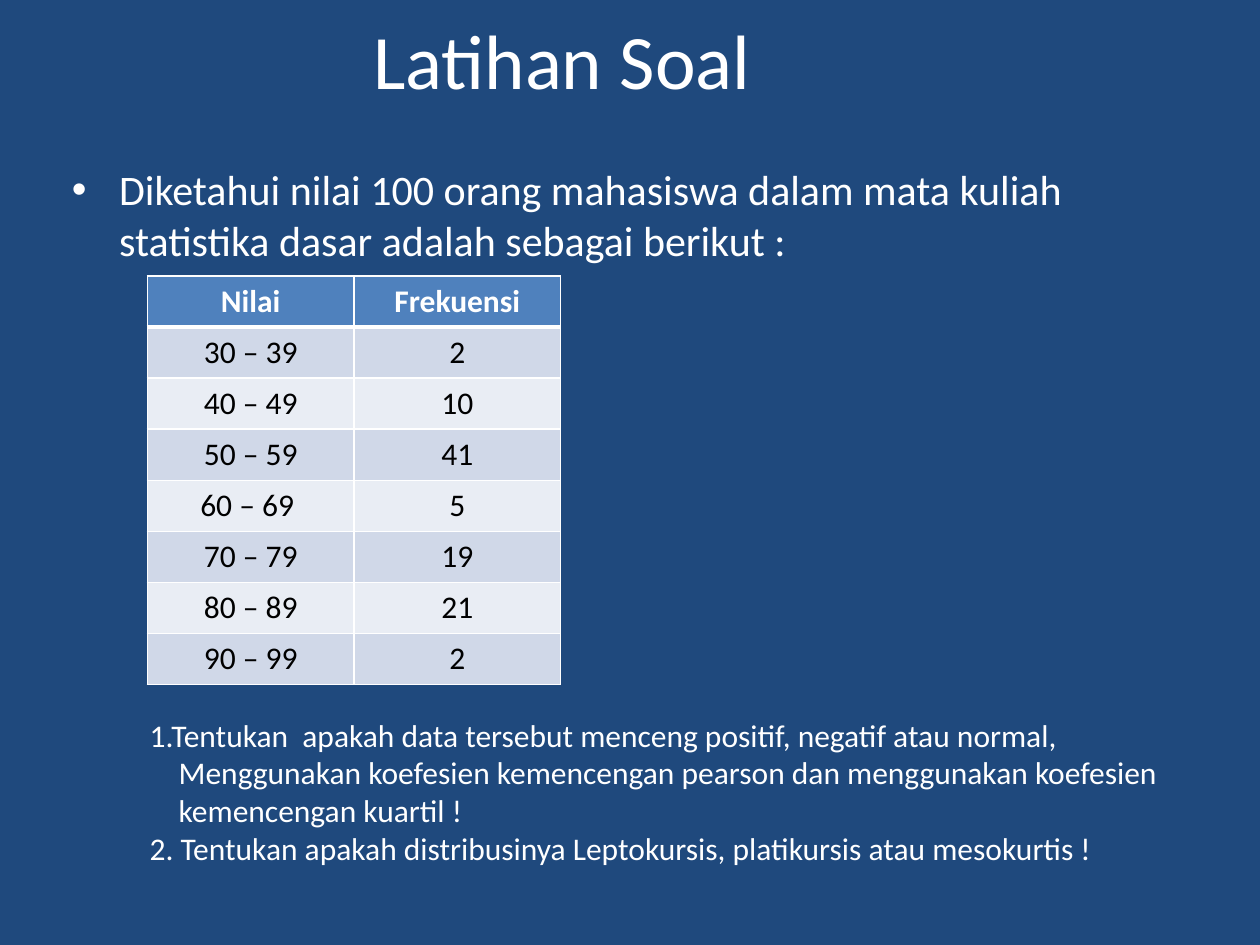
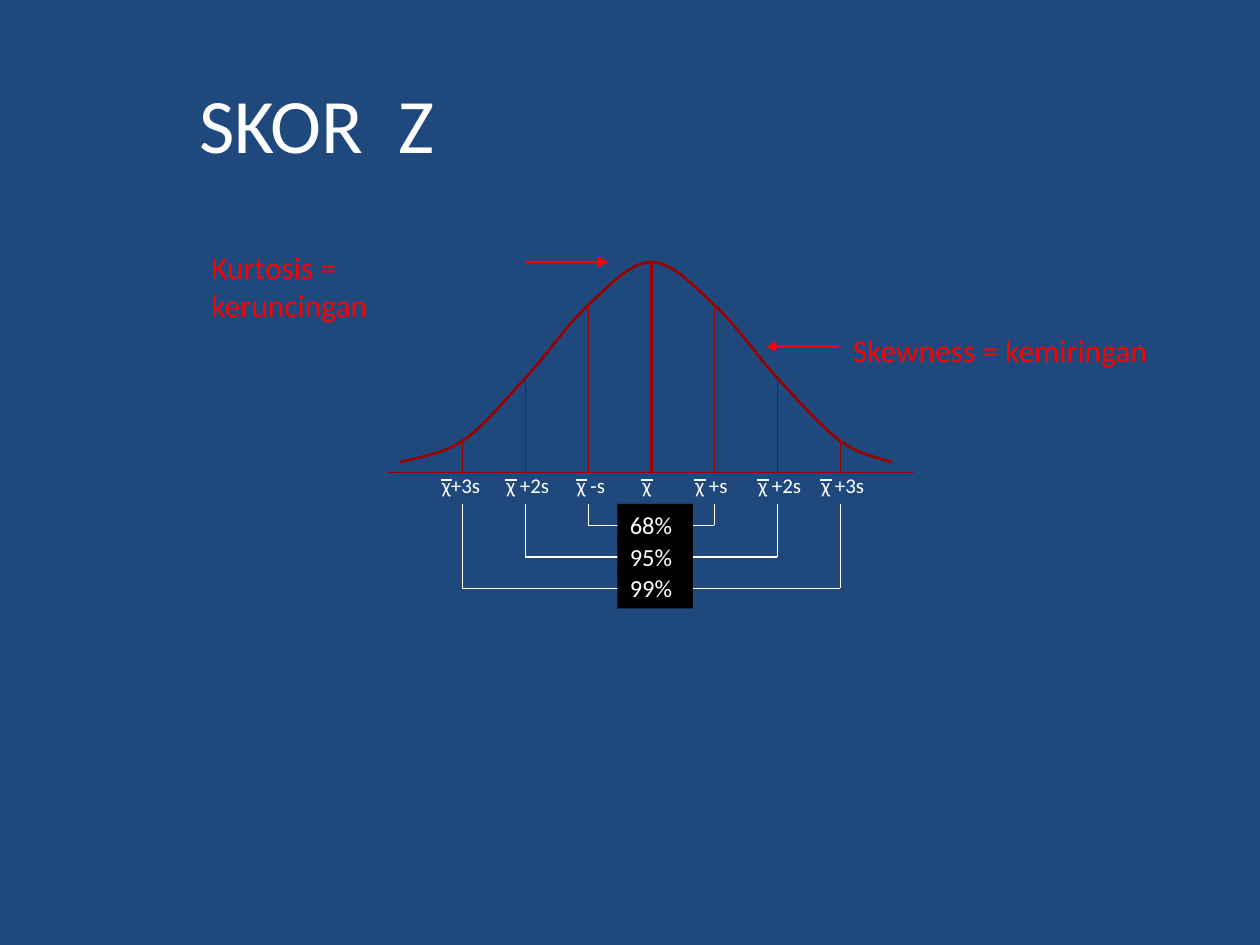
import lxml.etree
import pptx
import pptx.dml.color
import pptx.enum.shapes
import pptx.enum.text
import pptx.oxml.ns
import pptx.util

Inches = pptx.util.Inches
Pt = pptx.util.Pt
RGBColor = pptx.dml.color.RGBColor
ALIGN = pptx.enum.text.PP_ALIGN
qn = pptx.oxml.ns.qn

FONT = "Calibri"
NAVY = RGBColor(0x1F, 0x49, 0x7D)
WHITE = RGBColor(0xFF, 0xFF, 0xFF)
BLACK = RGBColor(0, 0, 0)
RED = RGBColor(0xFF, 0, 0)
MAROON = RGBColor(0x99, 0, 0)
HEADER_BLUE = RGBColor(0x4F, 0x81, 0xBD)
BAND_COLORS = [RGBColor(0xD0, 0xD8, 0xE8), RGBColor(0xE9, 0xED, 0xF4)]


def write(text_frame, text, size=18, color=WHITE, bold=False, align=ALIGN.LEFT):
    text_frame.word_wrap = True
    text_frame.auto_size = pptx.enum.text.MSO_AUTO_SIZE.NONE
    text_frame.text = text
    for paragraph in text_frame.paragraphs:
        paragraph.alignment = align
        for run in paragraph.runs:
            run.font.name = FONT
            run.font.size = Pt(size)
            run.font.bold = bold
            run.font.color.rgb = color


def draw_line(slide, start, end, color=WHITE, width=0.75, arrow=False):
    connector = slide.shapes.add_connector(
        pptx.enum.shapes.MSO_CONNECTOR.STRAIGHT,
        *[Inches(value) for value in (*start, *end)])
    connector.line.color.rgb = color
    connector.line.width = Pt(width)
    properties = connector._element.spPr
    if arrow:
        lxml.etree.SubElement(properties.find(qn("a:ln")), qn("a:tailEnd"), type="triangle")
    lxml.etree.SubElement(properties, qn("a:effectLst"))


# Presentation and shared background
presentation = pptx.Presentation()
presentation.slide_width = Inches(10)
presentation.slide_height = Inches(7.5)
background = presentation.slide_master.background.fill
background.solid()
background.fore_color.rgb = NAVY

# Slide 1: exercise
slide = presentation.slides.add_slide(presentation.slide_layouts[1])
title = slide.shapes.title
title.left, title.top, title.width, title.height = map(Inches, (0.5, -0.16, 7.92, 1.25))
write(title.text_frame, "Latihan Soal", size=44, align=ALIGN.CENTER)

body = slide.placeholders[1]
body.left, body.top, body.width, body.height = map(Inches, (0.47, 1.25, 9, 4.95))
write(body.text_frame, "Diketahui nilai 100 orang mahasiswa dalam mata kuliah "
      "statistika dasar adalah sebagai berikut :", size=24)

# Frequency table
frequency_rows = [
    ("Nilai", "Frekuensi"),
    ("30 – 39", "2"),
    ("40 – 49", "10"),
    ("50 – 59", "41"),
    ("60 – 69 ", "5"),
    ("70 – 79", "19"),
    ("80 – 89", "21"),
    ("90 – 99", "2"),
]
table = slide.shapes.add_table(len(frequency_rows), 2, Inches(1.17), Inches(2.19),
                               Inches(3.28), Inches(3.24)).table
for row_index, row_values in enumerate(frequency_rows):
    is_header = row_index == 0
    for column_index, value in enumerate(row_values):
        cell = table.cell(row_index, column_index)
        write(cell.text_frame, value, color=WHITE if is_header else BLACK,
              bold=is_header, align=ALIGN.CENTER)
        cell_properties = cell._tc.get_or_add_tcPr()
        for side in ("lnL", "lnR", "lnT", "lnB"):
            thick = (side == "lnB" and is_header) or (side == "lnT" and row_index == 1)
            border = lxml.etree.SubElement(cell_properties, qn("a:" + side),
                                           w=str(Pt(3 if thick else 1)))
            border_fill = lxml.etree.SubElement(border, qn("a:solidFill"))
            lxml.etree.SubElement(border_fill, qn("a:srgbClr"), val=str(WHITE))
        cell.fill.solid()
        cell.fill.fore_color.rgb = HEADER_BLUE if is_header else BAND_COLORS[(row_index - 1) % 2]

# Questions, with a hanging indent
questions = slide.shapes.add_textbox(Inches(1.09), Inches(5.63), Inches(8.4), Inches(1.31))
write(questions.text_frame,
      "1.Tentukan  apakah data tersebut menceng positif, negatif atau normal,\v"
      "Menggunakan koefesien kemencengan pearson dan menggunakan koefesien\v"
      "kemencengan kuartil !\n"
      "2. Tentukan apakah distribusinya Leptokursis, platikursis atau mesokurtis !")
for paragraph in questions.text_frame.paragraphs:
    paragraph_properties = paragraph._p.get_or_add_pPr()
    paragraph_properties.set("marL", str(Inches(0.23)))
    paragraph_properties.set("indent", str(Inches(-0.23)))

# Slide 2: z score
slide = presentation.slides.add_slide(presentation.slide_layouts[5])
title = slide.shapes.title
title.left, title.top, title.width, title.height = map(Inches, (1.48, 0.55, 4.45, 0.84))
write(title.text_frame, "SKOR  Z", size=44)

# Base line and verticals at each standard deviation
CENTER, STEP, BASE = 5.17, 0.5, 3.75
curve_heights = [2.08, 2.42, 3, 3.5]
draw_line(slide, (3.08, BASE), (7.25, BASE), MAROON, 1)
for deviation in range(-3, 4):
    x = CENTER + deviation * STEP
    draw_line(slide, (x, BASE), (x, curve_heights[abs(deviation)]), MAROON,
              0.75 if deviation else 1.5)

# Bell curve: smooth spline through the tops of the verticals
knots = [(CENTER + deviation * STEP, curve_heights[abs(deviation)])
         for deviation in range(-3, 4)]
knots = [(3.17, 3.67), *knots, (7.08, 3.67)]
padded = [knots[0], *knots, knots[-1]]
SAMPLES = 16
curve_points = []
for before, start, end, after in zip(padded, padded[1:], padded[2:], padded[3:]):
    for sample in range(1, SAMPLES + 1):
        t = sample / SAMPLES
        curve_points.append(tuple(
            Inches((1 - t) ** 3 * b + 3 * (1 - t) ** 2 * t * (b + (c - a) / 6)
                   + 3 * (1 - t) * t ** 2 * (c - (d - b) / 6) + t ** 3 * c)
            for a, b, c, d in zip(before, start, end, after)))
builder = slide.shapes.build_freeform(Inches(knots[0][0]), Inches(knots[0][1]))
builder.add_line_segments(curve_points, close=False)
curve = builder.convert_to_shape()
curve.shadow.inherit = False
curve.fill.background()
curve.line.color.rgb = MAROON
curve.line.width = Pt(1.5)

# Axis labels, each with a bar above the letter
axis_labels = [(3.41, "χ+3s"), (3.92, "χ +2s"), (4.48, "χ -s"), (5, "χ"),
               (5.42, "χ +s"), (5.92, "χ +2s"), (6.42, "χ +3s")]
for left, text in axis_labels:
    label = slide.shapes.add_textbox(Inches(left), Inches(3.7), Inches(0.7), Inches(0.3))
    write(label.text_frame, text, size=12)
    draw_line(slide, (left + 0.09, 3.81), (left + 0.18, 3.81))

# Brackets and their percentages
for index, percentage in enumerate(["68%", "95%", "99%"]):
    bracket_y = 4.17 + 0.25 * index
    reach = STEP * (index + 1)
    left, right = CENTER - reach, CENTER + reach
    draw_line(slide, (left, 4), (left, bracket_y))
    draw_line(slide, (right, 4), (right, bracket_y))
    draw_line(slide, (left, bracket_y), (right, bracket_y))
    box = slide.shapes.add_shape(pptx.enum.shapes.MSO_SHAPE.RECTANGLE, Inches(4.9),
                                 Inches(4 + 0.25 * index), Inches(0.6), Inches(0.33))
    box.shadow.inherit = False
    box.fill.solid()
    box.fill.fore_color.rgb = BLACK
    box.line.fill.background()
    write(box.text_frame, percentage, size=14)
    box.text_frame.vertical_anchor = pptx.enum.text.MSO_ANCHOR.TOP

# Callouts with arrows
for left, top, width, height, text in [(6.67, 2.58, 2.7, 0.37, "Skewness = kemiringan"),
                                       (1.58, 1.92, 2, 0.7, "Kurtosis = keruncingan")]:
    callout = slide.shapes.add_textbox(Inches(left), Inches(top), Inches(width), Inches(height))
    write(callout.text_frame, text, color=RED)
draw_line(slide, (4.17, 2.08), (4.83, 2.08), RED, arrow=True)
draw_line(slide, (6.67, 2.75), (6.08, 2.75), RED, arrow=True)

presentation.save("out.pptx")
